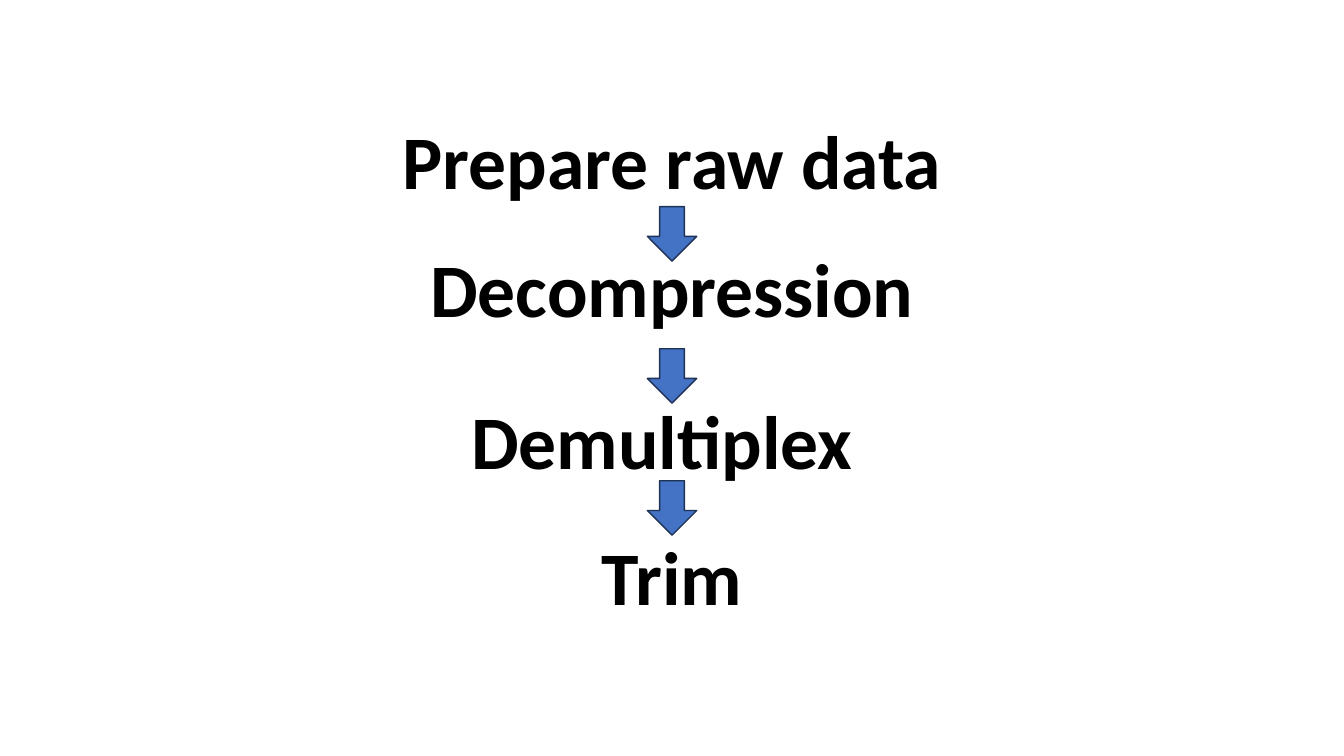
import dataclasses

import pptx
import pptx.dml.color
import pptx.enum.shapes
import pptx.enum.text
import pptx.presentation
import pptx.slide
import pptx.util

Inches = pptx.util.Inches
Color = pptx.dml.color.RGBColor


@dataclasses.dataclass(frozen=True)
class Theme:
    font: str = "Calibri"
    size: int = 54
    ink: str = "000000"
    fill: str = "4472C4"
    edge: str = "1E3256"
    line: float = 1


@dataclasses.dataclass(frozen=True)
class Step:
    text: str
    top: float
    left: float = 0.27


THEME = Theme()
STEPS = (
    Step("Prepare raw data", 1.08),
    Step("Decompression", 2.35),
    Step("Demultiplex", 3.86, left=0.17),
    Step("Trim", 5.21),
)
STEP_SIZE = (12.79, 1.01)
ARROW_TOPS = (2.05, 3.46, 4.77)
ARROW_LEFT = 6.42
ARROW_SIZE = (0.49, 0.54)


def write(frame, text: str, *, size: float, color: str, bold: bool = False) -> None:
    frame.word_wrap = True
    frame.auto_size = pptx.enum.text.MSO_AUTO_SIZE.SHAPE_TO_FIT_TEXT
    line = frame.paragraphs[0]
    line.alignment = pptx.enum.text.PP_ALIGN.CENTER
    run = line.add_run()
    run.text = text
    run.font.name = THEME.font
    run.font.size = pptx.util.Pt(size)
    run.font.bold = bold
    run.font.color.rgb = Color.from_string(color)


def add_step(slide: pptx.slide.Slide, step: Step) -> None:
    width, height = STEP_SIZE
    box = slide.shapes.add_textbox(
        Inches(step.left), Inches(step.top), Inches(width), Inches(height)
    )
    write(box.text_frame, step.text, size=THEME.size, color=THEME.ink, bold=True)


def add_arrow(slide: pptx.slide.Slide, top: float) -> None:
    width, height = ARROW_SIZE
    arrow = slide.shapes.add_shape(
        pptx.enum.shapes.MSO_SHAPE.DOWN_ARROW,
        Inches(ARROW_LEFT), Inches(top), Inches(width), Inches(height),
    )
    arrow.shadow.inherit = False
    arrow.fill.solid()
    arrow.fill.fore_color.rgb = Color.from_string(THEME.fill)
    arrow.line.color.rgb = Color.from_string(THEME.edge)
    arrow.line.width = pptx.util.Pt(THEME.line)


def main() -> None:
    deck = pptx.Presentation()
    deck.slide_width, deck.slide_height = Inches(13.33), Inches(7.5)
    blank = deck.slide_layouts.get_by_name("Blank")
    slide = deck.slides.add_slide(blank)
    for step in STEPS:
        add_step(slide, step)
    for top in ARROW_TOPS:
        add_arrow(slide, top)
    deck.save("out.pptx")


if __name__ == "__main__":
    main()
